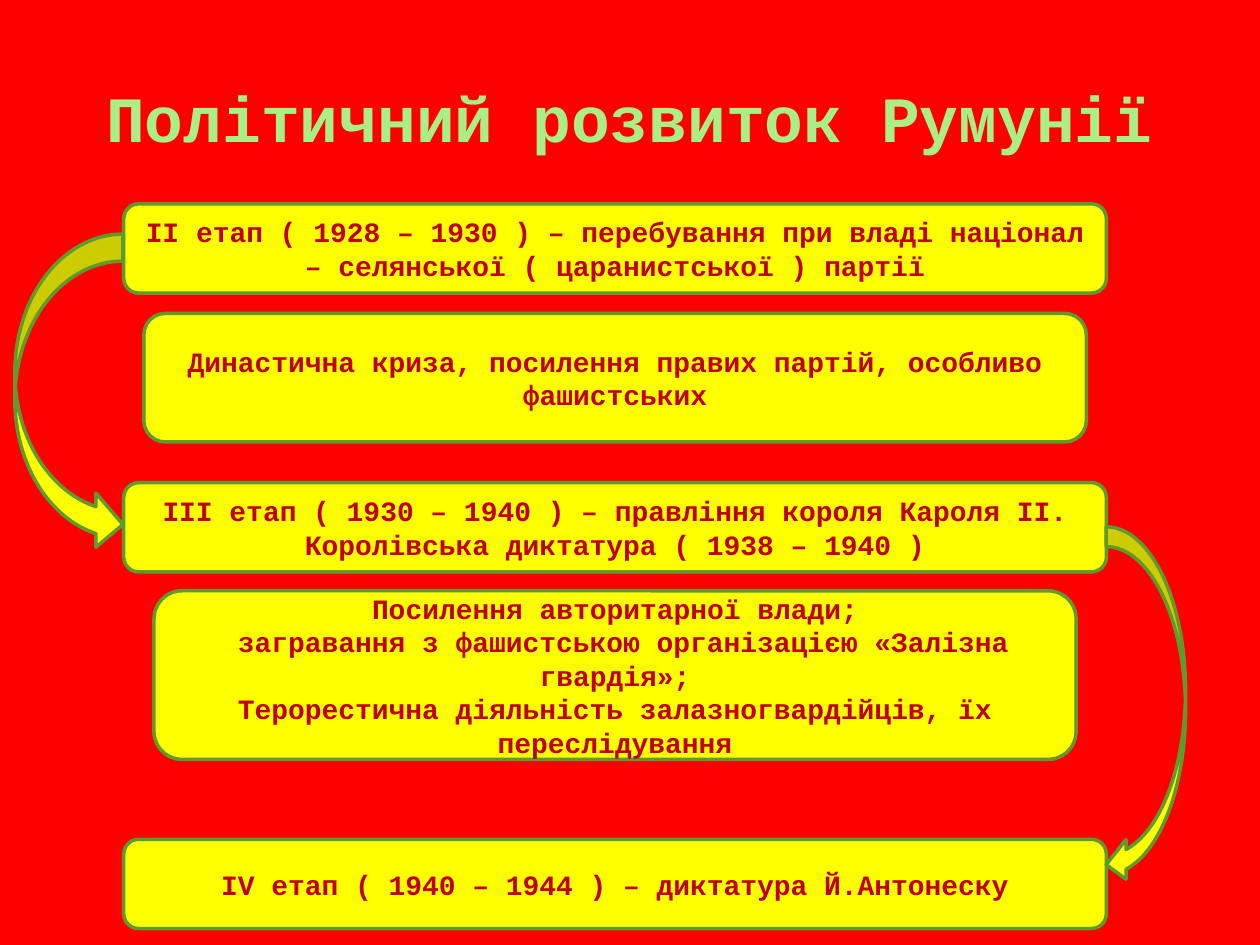
from typing import NamedTuple

from pptx import Presentation
from pptx.dml.color import RGBColor
from pptx.enum import shapes, text
from pptx.util import Cm, Pt

RED = RGBColor(0xFF, 0x00, 0x00)
YELLOW = RGBColor(0xFF, 0xFF, 0x00)
GREEN = RGBColor(0x5E, 0x9B, 0x2C)
LIME = RGBColor(0xA9, 0xEF, 0x86)
DARK = RGBColor(0xC0, 0x00, 0x00)
FACE = "Courier New"
KIND = shapes.MSO_SHAPE
MID = 12.4  # shared centre line of all boxes, cm


class Box(NamedTuple):
    top: float
    width: float
    height: float
    lines: list[str]


class Arrow(NamedTuple):
    kind: KIND
    left: float
    top: float
    width: float
    height: float


def stage(top: float, line: str) -> Box:
    return Box(top, 19.81, 1.8, [line])


BOXES = [
    stage(4.11, "ІІ етап ( 1928 – 1930 ) – перебування при владі націонал – селянської ( царанистської ) партії"),
    stage(9.73, "ІІІ етап ( 1930 – 1940 ) – правління короля Кароля ІІ. Королівська диктатура ( 1938 – 1940 )"),
    stage(16.92, "ІV етап ( 1940 – 1944 ) – диктатура Й.Антонеску"),
    Box(6.32, 19, 2.59, ["Династична криза, посилення правих партій, особливо фашистських"]),
    Box(11.91, 18.59, 3.4, [
        "Посилення авторитарної влади;",
        " загравання з фашистською організацією «Залізна гвардія»;",
        "Терорестична діяльність залазногвардійців, їх переслідування",
    ]),
]
ARROWS = [
    Arrow(KIND.CURVED_RIGHT_ARROW, 0.3, 4.72, 2.18, 6.4),
    Arrow(KIND.CURVED_LEFT_ARROW, 22.3, 10.62, 1.6, 7.21),
]


def write(frame, lines: list[str], size: float, color: RGBColor) -> None:
    frame.text = "\n".join(lines)
    frame.word_wrap = True
    frame.auto_size = text.MSO_AUTO_SIZE.NONE
    frame.vertical_anchor = text.MSO_ANCHOR.MIDDLE
    for para in frame.paragraphs:
        para.alignment = text.PP_ALIGN.CENTER
        font = para.font
        font.name, font.size, font.bold = FACE, Pt(size), True
        font.color.rgb = color


def add_form(slide, item: Arrow):
    """Add a yellow preset shape with a green outline."""
    form = slide.shapes.add_shape(item.kind, *map(Cm, item[1:]))
    form.shadow.inherit = False
    form.fill.solid()
    form.fill.fore_color.rgb = YELLOW
    form.line.color.rgb = GREEN
    form.line.width = Pt(2)
    return form


def add_box(slide, box: Box) -> None:
    left = MID - box.width / 2
    form = add_form(slide, Arrow(KIND.ROUNDED_RECTANGLE, left, box.top, box.width, box.height))
    write(form.text_frame, box.lines, 16, DARK)


def main() -> None:
    deck = Presentation()
    deck.slide_width, deck.slide_height = Cm(25.4), Cm(19.05)
    slide = deck.slides.add_slide(deck.slide_layouts[5])
    back = slide.background.fill
    back.solid()
    back.fore_color.rgb = RED

    title = slide.shapes.title
    title.left, title.top = Cm(1.27), Cm(0.76)
    title.width, title.height = Cm(22.86), Cm(3.18)
    write(title.text_frame, ["Політичний розвиток Румунії"], 36.9, LIME)

    for box in BOXES:
        add_box(slide, box)
    for arrow in ARROWS:
        add_form(slide, arrow)
    deck.save("out.pptx")


if __name__ == "__main__":
    main()
